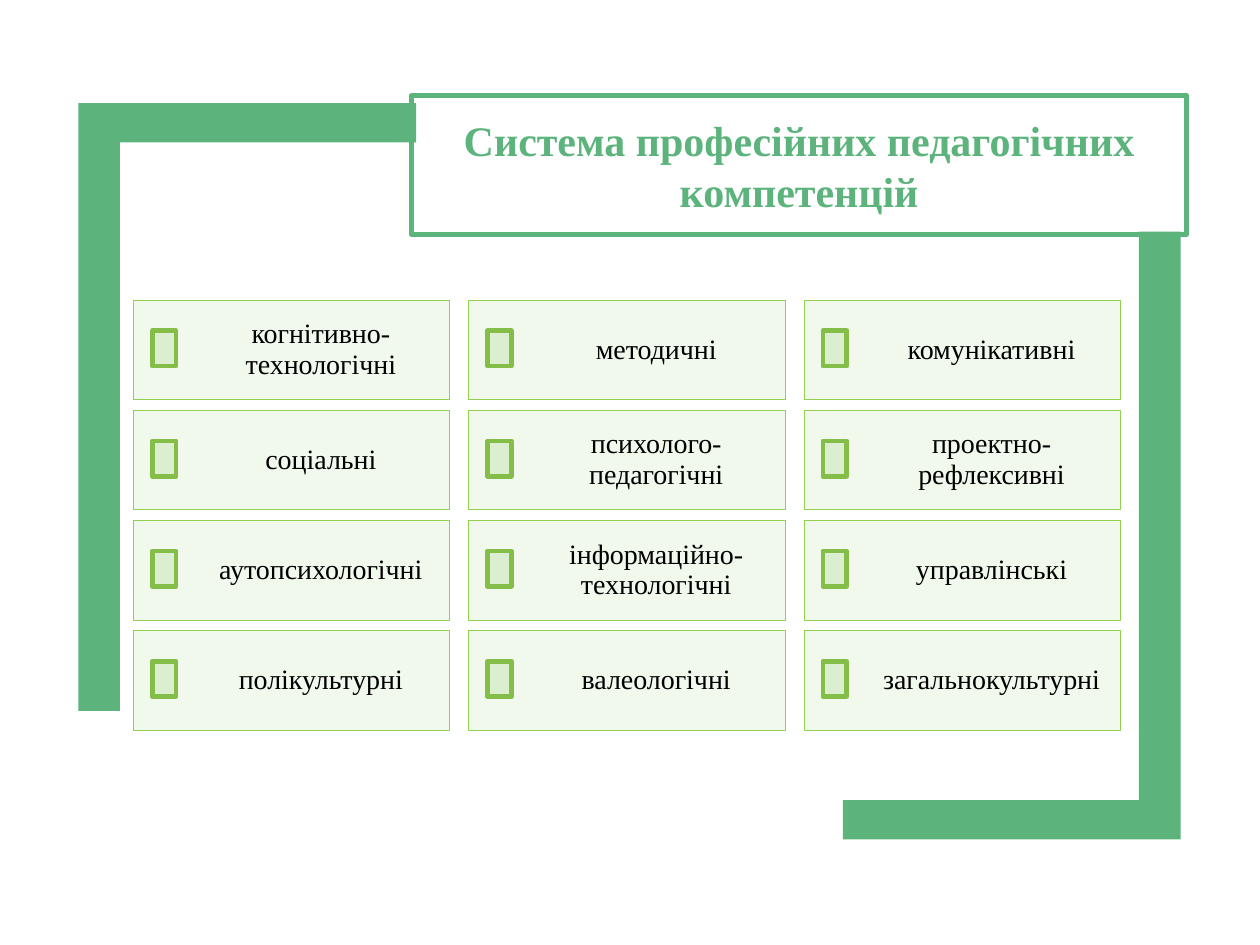
from lxml import etree
from pptx import Presentation, util as u
from pptx.dml.color import RGBColor
from pptx.enum import shapes, text
from pptx.oxml.ns import qn

HUES = {"frame": "5CB37C", "pale": "DCEED0", "edge": "92D050",
        "mark": "85BD49", "ink": "000000"}
FONT = "Times New Roman"

ROWS = [
    ["когнітивно-технологічні", "методичні", "комунікативні"],
    ["соціальні", "психолого-педагогічні", "проектно-рефлексивні"],
    ["аутопсихологічні", "інформаційно-технологічні", "управлінські"],
    ["полікультурні", "валеологічні", "загальнокультурні"],
]
LEFT, TOP = 2.69, 6.05
STEP_X, STEP_Y = 6.76, 2.22

# Lower right corner of the frame; the upper left one is its half turn
HOOK = [(22.96, 4.67), (23.8, 4.67), (23.8, 16.92),
        (16.99, 16.92), (16.99, 16.13), (22.96, 16.13)]
TURN_X, TURN_Y = 25.38, 19


def color(name):
    return RGBColor.from_string(HUES[name])


class Deck:
    """Holds the text style and the current slide; lengths are in cm."""

    def __init__(self, slide):
        self.slide = slide
        self.font = FONT

    def box(self, x, y, w, h, line, weight, fill=None, alpha=None):
        """Draw a rectangle; alpha is the opacity of its fill in percent."""
        shape = self.slide.shapes.add_shape(
            shapes.MSO_SHAPE.RECTANGLE, u.Cm(x), u.Cm(y), u.Cm(w), u.Cm(h))
        shape.shadow.inherit = False
        shape.line.color.rgb = color(line)
        shape.line.width = u.Pt(weight)
        if fill:
            shape.fill.solid()
            shape.fill.fore_color.rgb = color(fill)
        else:
            shape.fill.background()
        if alpha:
            tint = shape.element.spPr.find(qn("a:solidFill")).find(qn("a:srgbClr"))
            etree.SubElement(tint, qn("a:alpha"), val=str(alpha * 1000))
        return shape

    def label(self, shape, words, size, hue, bold=False):
        frame = shape.text_frame
        frame.word_wrap = True
        frame.vertical_anchor = text.MSO_ANCHOR.MIDDLE
        para = frame.paragraphs[0]
        para.alignment = text.PP_ALIGN.CENTER
        run = para.add_run()
        run.text = words
        run.font.name = self.font
        run.font.size = u.Pt(size)
        run.font.bold = bold
        run.font.color.rgb = color(hue)
        return frame

    def hook(self, points):
        spots = [(u.Cm(x), u.Cm(y)) for x, y in points]
        pen = self.slide.shapes.build_freeform(*spots[0])
        pen.add_line_segments(spots[1:], close=True)
        shape = pen.convert_to_shape()
        shape.shadow.inherit = False
        shape.fill.solid()
        shape.fill.fore_color.rgb = color("frame")
        shape.line.fill.background()

    def card(self, x, y, words):
        shape = self.box(x, y, 6.38, 2.01, "edge", 0.5, "pale", 40)
        frame = self.label(shape, words, 16, "ink")
        frame.margin_left = u.Cm(1.35)
        frame.margin_right = frame.margin_top = frame.margin_bottom = u.Cm(0.17)
        frame.paragraphs[0].line_spacing = 0.9
        self.box(x + 0.38, y + 0.62, 0.48, 0.71, "mark", 2.75, "pale")

    def title(self, words):
        shape = self.box(8.3, 1.93, 15.62, 2.8, "frame", 2.75)
        self.label(shape, words, 24, "frame", bold=True)


def main():
    show = Presentation()
    show.slide_width, show.slide_height = u.Cm(25.4), u.Cm(19.05)
    deck = Deck(show.slides.add_slide(show.slide_layouts[6]))
    deck.hook(HOOK)
    deck.hook([(TURN_X - x, TURN_Y - y) for x, y in HOOK])
    for r, row in enumerate(ROWS):
        for c, words in enumerate(row):
            deck.card(LEFT + c * STEP_X, TOP + r * STEP_Y, words)
    deck.title("Система професійних педагогічних компетенцій")
    show.save("out.pptx")


if __name__ == "__main__":
    main()
